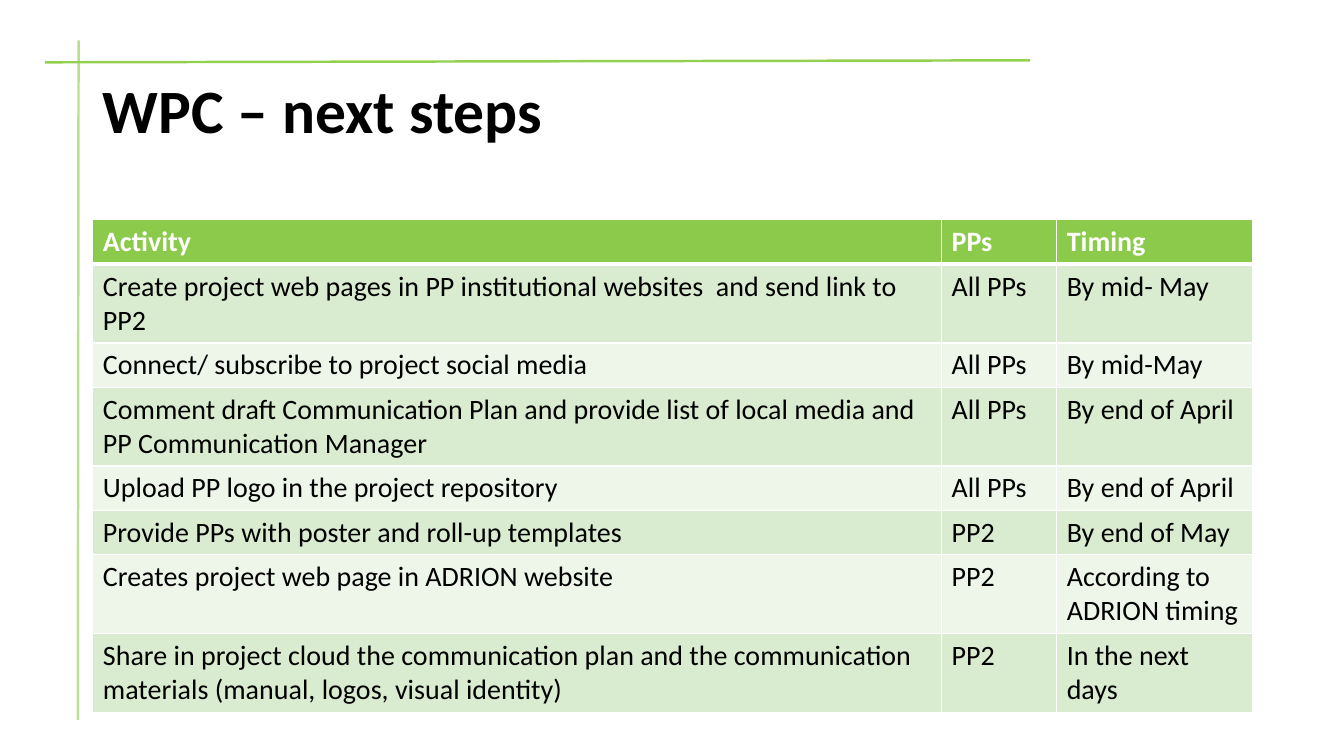
"""Build the slide listing the next steps of the communication work package."""
import dataclasses

import lxml.etree
import pptx
import pptx.dml.color
import pptx.enum.shapes
import pptx.enum.text
import pptx.oxml.ns
import pptx.util

Cm = pptx.util.Cm


@dataclasses.dataclass(frozen=True)
class Theme:
    """Colours, font and type sizes of the slide."""
    font: str = "Calibri"
    title_size: int = 44
    table_size: int = 20
    text: str = "000000"
    white: str = "FFFFFF"
    header: str = "8BCA4B"
    bands: tuple = ("DAECD0", "EEF6E9")
    upright_rule: str = "B9DF93"
    level_rule: str = "92D050"
    rule_width: float = 1.75
    border_width: float = 1
    header_border_width: float = 3


class SlideBuilder:
    """Draws styled elements on one slide."""

    def __init__(self, slide, theme):
        self.slide = slide
        self.theme = theme

    def rgb(self, value):
        return pptx.dml.color.RGBColor.from_string(value)

    def format_runs(self, para, size, color, bold):
        for span in para.runs:
            span.font.name = self.theme.font
            span.font.size = pptx.util.Pt(size)
            span.font.bold = bold
            span.font.color.rgb = self.rgb(color)

    def rule(self, start, end, color):
        line = self.slide.shapes.add_connector(
            pptx.enum.shapes.MSO_CONNECTOR.STRAIGHT,
            *(Cm(value) for value in start + end))
        line.line.color.rgb = self.rgb(color)
        line.line.width = pptx.util.Pt(self.theme.rule_width)
        properties = line._element.spPr
        lxml.etree.SubElement(properties, pptx.oxml.ns.qn("a:effectLst"))

    def title(self, text, left, top, width, height):
        box = self.slide.shapes.title
        box.left, box.top = Cm(left), Cm(top)
        box.width, box.height = Cm(width), Cm(height)
        frame = box.text_frame
        frame.text = text
        frame.word_wrap = True
        frame.auto_size = pptx.enum.text.MSO_AUTO_SIZE.NONE
        frame.vertical_anchor = pptx.enum.text.MSO_ANCHOR.MIDDLE
        para = frame.paragraphs[0]
        para.alignment = pptx.enum.text.PP_ALIGN.LEFT
        para.line_spacing = 0.9
        self.format_runs(para, self.theme.title_size, self.theme.text, True)

    def border(self, cell, side, width):
        properties = cell._tc.get_or_add_tcPr()
        line = lxml.etree.SubElement(
            properties, pptx.oxml.ns.qn(f"a:ln{side}"), w=str(pptx.util.Pt(width)))
        fill = lxml.etree.SubElement(line, pptx.oxml.ns.qn("a:solidFill"))
        lxml.etree.SubElement(
            fill, pptx.oxml.ns.qn("a:srgbClr"), val=self.theme.white)

    def cell(self, cell, text, row):
        theme = self.theme
        is_header = row == 0
        thick_side = {0: "B", 1: "T"}.get(row)
        for side in "LRTB":
            thick = side == thick_side
            self.border(cell, side, theme.header_border_width if thick
                        else theme.border_width)
        cell.fill.solid()
        cell.fill.fore_color.rgb = self.rgb(
            theme.header if is_header else theme.bands[(row - 1) % 2])
        cell.text_frame.text = text
        self.format_runs(cell.text_frame.paragraphs[0], theme.table_size,
                         theme.white if is_header else theme.text, is_header)

    def table(self, rows, left, top, widths, row_height):
        table = self.slide.shapes.add_table(
            len(rows), len(widths), Cm(left), Cm(top),
            Cm(sum(widths)), Cm(row_height * len(rows))).table
        for column, width in zip(table.columns, widths):
            column.width = Cm(width)
        for row, texts in enumerate(rows):
            table.rows[row].height = Cm(row_height)
            for column, text in enumerate(texts):
                self.cell(table.cell(row, column), text, row)


NEXT_STEPS = [
    ("Activity", "PPs", "Timing"),
    ("Create project web pages in PP institutional websites  and send link to PP2",
     "All PPs", "By mid- May"),
    ("Connect/ subscribe to project social media", "All PPs", "By mid-May"),
    ("Comment draft Communication Plan and provide list of local media and "
     "PP Communication Manager", "All PPs", "By end of April"),
    ("Upload PP logo in the project repository", "All PPs", "By end of April"),
    ("Provide PPs with poster and roll-up templates", "PP2", "By end of May"),
    ("Creates project web page in ADRION website", "PP2",
     "According to ADRION timing"),
    ("Share in project cloud the communication plan and the communication "
     "materials (manual, logos, visual identity)", "PP2", "In the next days"),
]


def main():
    deck = pptx.Presentation()
    deck.slide_width, deck.slide_height = Cm(33.87), Cm(19.05)
    page = deck.slides.add_slide(deck.slide_layouts.get_by_name("Title Only"))
    theme = Theme()
    builder = SlideBuilder(page, theme)
    builder.rule((1.98, 1.02), (1.96, 18.14), theme.upright_rule)
    builder.rule((1.14, 1.57), (25.96, 1.52), theme.level_rule)
    builder.title("WPC – next steps", 2.34, 1.02, 29.21, 3.68)
    builder.table(NEXT_STEPS, 2.34, 5.54, (21.39, 2.9, 4.93), 1.04)
    deck.save("out.pptx")


if __name__ == "__main__":
    main()
